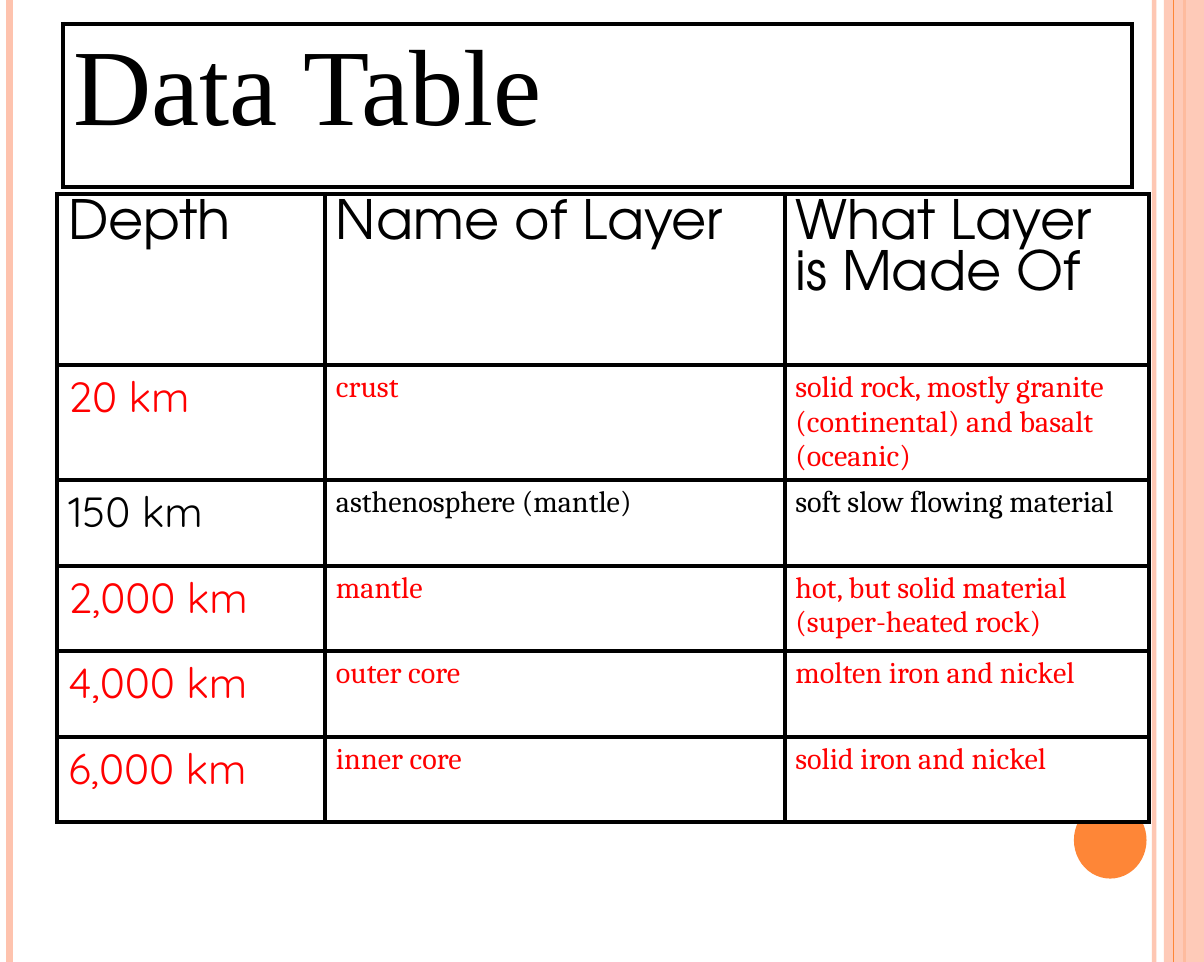
from dataclasses import dataclass

from lxml.etree import SubElement as Sub
from pptx import Presentation
from pptx.dml.color import RGBColor
from pptx.enum.shapes import MSO_CONNECTOR as Conn, MSO_SHAPE as Kind
from pptx.oxml.ns import qn
from pptx.slide import Slide
from pptx.table import _Cell as Cell
from pptx.util import Inches, Pt

WIDE, HIGH = 11.11, 8.88
BLACK = RGBColor(0x00, 0x00, 0x00)
RED = RGBColor(0xFF, 0x00, 0x00)
WHITE = RGBColor(0xFF, 0xFF, 0xFF)
PEACH = RGBColor(0xFE, 0xC3, 0xAE)
ORANGE = RGBColor(0xFE, 0x86, 0x37)


@dataclass
class Stripe:
    left: float
    color: RGBColor
    width: float
    alpha: int = 100


@dataclass
class Layer:
    depth: str
    name: str
    made: str
    color: RGBColor = RED


BACK = [
    Stripe(10.65, PEACH, 3, 93),
    Stripe(0.09, PEACH, 4.5),
    Stripe(10.93, ORANGE, 1.5),
]
FRONT = Stripe(10.83, ORANGE, 0.75)
HEADS = ["Depth", "Name of Layer", "What Layer is Made Of"]
LAYERS = [
    Layer("20 km", "crust",
          "solid rock, mostly granite (continental) and basalt (oceanic)"),
    Layer("150 km", "asthenosphere (mantle)", "soft slow flowing material", BLACK),
    Layer("2,000 km", "mantle", "hot, but solid material (super-heated rock)"),
    Layer("4,000 km", "outer core", "molten iron and nickel"),
    Layer("6,000 km", "inner core", "solid iron and nickel"),
]


def fade(part, alpha: int) -> None:
    for color in part.iter(qn("a:srgbClr")):
        Sub(color, qn("a:alpha"), val=str(alpha * 1000))


def draw_stripe(slide: Slide, item: Stripe) -> None:
    x = Inches(item.left)
    line = slide.shapes.add_connector(Conn.STRAIGHT, x, 0, x, Inches(HIGH))
    line.line.color.rgb = item.color
    line.line.width = Pt(item.width)
    props = line._element.spPr
    if item.alpha < 100:
        fade(props, item.alpha)
    Sub(props, qn("a:effectLst"))


def draw_shape(slide: Slide, kind: Kind, box: tuple[float, ...],
               color: RGBColor, alpha: int = 100) -> None:
    shape = slide.shapes.add_shape(kind, *map(Inches, box))
    shape.shadow.inherit = False
    shape.fill.solid()
    shape.fill.fore_color.rgb = color
    shape.line.fill.background()
    if alpha < 100:
        fade(shape._element.spPr, alpha)


def frame(cell: Cell) -> None:
    props = cell._tc.get_or_add_tcPr()
    for at, side in enumerate(("a:lnL", "a:lnR", "a:lnT", "a:lnB")):
        edge = Sub(props, qn(side), w=str(Pt(3)))
        fill = Sub(edge, qn("a:solidFill"))
        Sub(fill, qn("a:srgbClr"), val=str(BLACK))
        props.insert(at, edge)


def write(cell: Cell, text: str, *, size: float, font: str,
          color: RGBColor = BLACK) -> None:
    cell.fill.solid()
    cell.fill.fore_color.rgb = WHITE
    frame(cell)
    run = cell.text_frame.paragraphs[0].add_run()
    run.text = text
    run.font.size = Pt(size)
    run.font.name = font
    run.font.bold = False
    run.font.color.rgb = color


def add_grid(slide: Slide, left: float, top: float,
             cols: list[float], rows: list[float]):
    box = map(Inches, (left, top, sum(cols), sum(rows)))
    grid = slide.shapes.add_table(len(rows), len(cols), *box).table
    grid.first_row = grid.horz_banding = False
    for col, width in zip(grid.columns, cols):
        col.width = Inches(width)
    for row, height in zip(grid.rows, rows):
        row.height = Inches(height)
    return grid


def main() -> None:
    deck = Presentation()
    deck.slide_width, deck.slide_height = Inches(WIDE), Inches(HIGH)
    slide = deck.slides.add_slide(deck.slide_layouts[6])
    slide.background.fill.solid()
    slide.background.fill.fore_color.rgb = WHITE

    for item in BACK:
        draw_stripe(slide, item)
    draw_shape(slide, Kind.RECTANGLE, (10.74, 0, 0.37, HIGH), PEACH, 87)
    draw_stripe(slide, FRONT)
    draw_shape(slide, Kind.OVAL, (9.91, 7.4, 0.67, 0.71), ORANGE)

    grid = add_grid(slide, 0.53, 1.79, [2.47, 4.24, 3.36],
                    [1.58, 0.83] + [0.79] * 4)
    for col, head in enumerate(HEADS):
        write(grid.cell(0, col), head, size=36, font="TeX Gyre Adventor")
    for row, layer in enumerate(LAYERS, 1):
        write(grid.cell(row, 0), layer.depth, size=28, font="Quicksand",
              color=layer.color)
        for col, text in enumerate((layer.name, layer.made), 1):
            write(grid.cell(row, col), text, size=20, font="Cambria",
                  color=layer.color)

    title = add_grid(slide, 0.58, 0.22, [9.87], [1.51])
    write(title.cell(0, 0), "Data Table", size=72, font="Times New Roman")
    deck.save("out.pptx")


if __name__ == "__main__":
    main()
